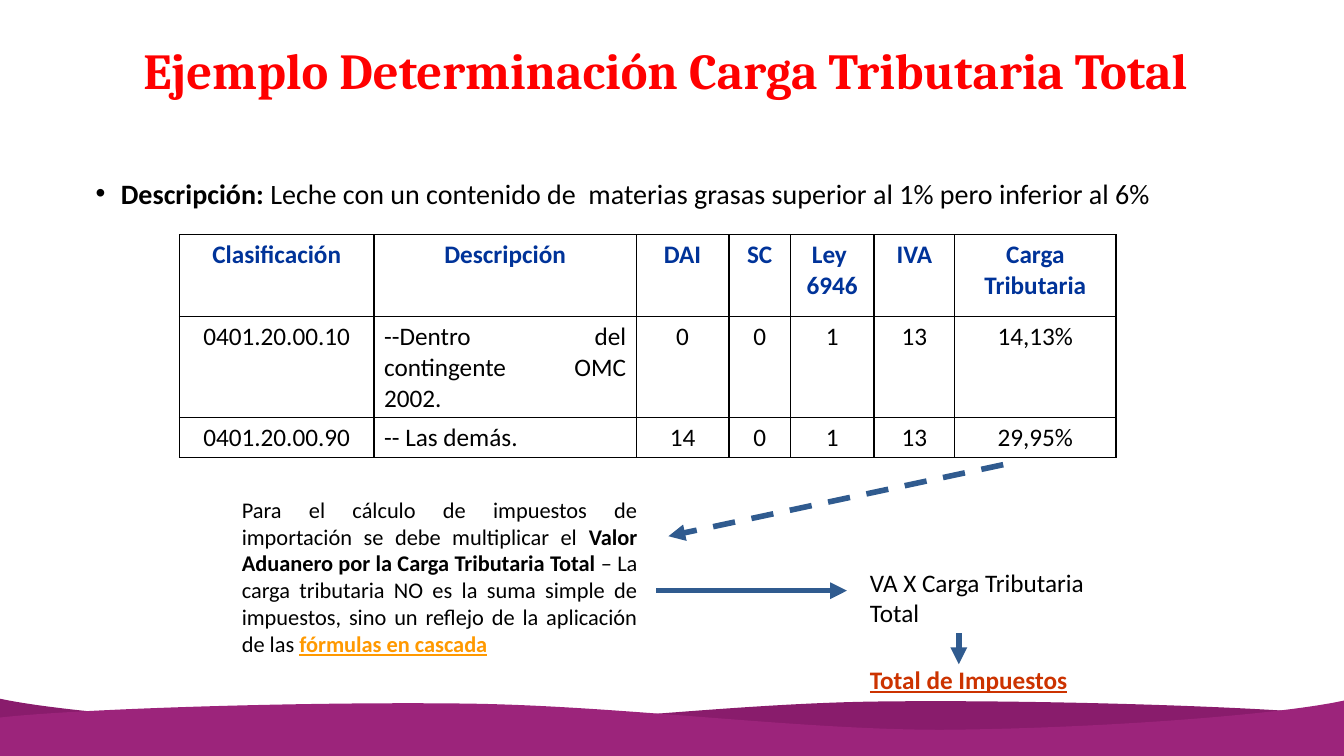
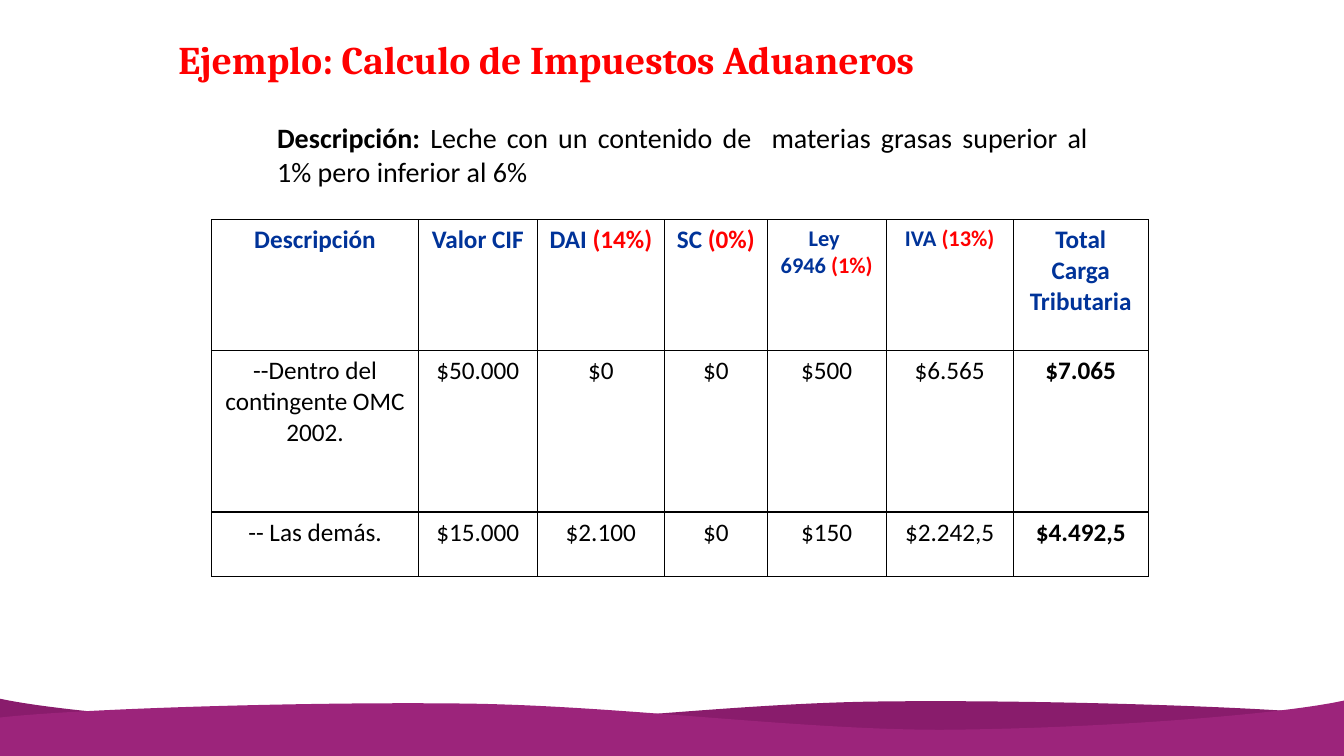
import pptx
import pptx.dml.color
import pptx.enum.dml
import pptx.enum.shapes
import pptx.enum.text
import pptx.oxml
import pptx.oxml.ns
import pptx.util
from lxml import etree

Inches = pptx.util.Inches
Pt = pptx.util.Pt
RGBColor = pptx.dml.color.RGBColor
Align = pptx.enum.text.PP_ALIGN
Anchor = pptx.enum.text.MSO_ANCHOR
qn = pptx.oxml.ns.qn

RED = RGBColor(0xFF, 0x00, 0x00)
BLACK = RGBColor(0x00, 0x00, 0x00)
HEADING_BLUE = RGBColor(0x00, 0x33, 0x99)
ARROW_BLUE = RGBColor(0x30, 0x5B, 0x8F)
ORANGE = RGBColor(0xFF, 0x99, 0x00)
RUST = RGBColor(0xCC, 0x33, 0x00)
DARK_PURPLE = RGBColor(0x89, 0x1C, 0x6C)
PURPLE = RGBColor(0x9C, 0x24, 0x7B)

SLIDE_WIDTH, SLIDE_HEIGHT = 13.33, 7.5
TITLE_FONT, BODY_FONT = "Cambria", "Calibri"
WAVE_POINTS = [
    (13.33, 7.1),
    (12.56, 7.01), (10.26, 6.94), (8.7, 6.96),
    (7.15, 6.98), (5.43, 7.22), (3.98, 7.22),
    (2.53, 7.21), (0.68, 7.08), (-0.01, 6.93),
]
DESCRIPTION = [
    ("Descripción:", {"bold": True}),
    " Leche con un contenido de  materias grasas superior al 1% pero inferior al 6%",
]


def write_text(frame, paragraphs, size=18, font=BODY_FONT, color=BLACK, bold=False,
               underline=False, align=Align.LEFT, line_spacing=None):
    """Fill a text frame; a run is a string or a (string, format overrides) pair."""
    frame.word_wrap = True
    for index, runs in enumerate(paragraphs):
        paragraph = frame.paragraphs[0] if index == 0 else frame.add_paragraph()
        paragraph.alignment = align
        if line_spacing:
            paragraph.line_spacing = line_spacing
        for item in [runs] if isinstance(runs, str) else runs:
            text, overrides = (item, {}) if isinstance(item, str) else item
            look = {"size": size, "color": color, "bold": bold, "underline": underline}
            look.update(overrides)
            run = paragraph.add_run()
            run.text = text
            run.font.name = font
            run.font.size = Pt(look["size"])
            run.font.bold = look["bold"]
            run.font.underline = look["underline"]
            run.font.color.rgb = look["color"]


def add_text(slide, box, paragraphs, anchor=Anchor.TOP, **look):
    """Add a text box and return its text frame."""
    frame = slide.shapes.add_textbox(*map(Inches, box)).text_frame
    frame.vertical_anchor = anchor
    write_text(frame, paragraphs, **look)
    return frame


def add_title(slide, box, text, **look):
    """Add the red slide title."""
    add_text(slide, box, [text], font=TITLE_FONT, color=RED, bold=True,
             line_spacing=0.9, **look)


def add_bullet(paragraph, indent):
    """Give a paragraph a hanging bullet."""
    properties = paragraph._p.get_or_add_pPr()
    properties.set("marL", str(Inches(indent)))
    properties.set("indent", str(-Inches(indent)))
    etree.SubElement(properties, qn("a:buFont")).set("typeface", "Arial")
    etree.SubElement(properties, qn("a:buChar")).set("char", "•")


def add_wave(slide, points, color):
    """Add a wave whose upper edge is curved and which fills down to the slide's bottom."""
    outline = points + [(points[-1][0], SLIDE_HEIGHT), (points[0][0], SLIDE_HEIGHT)]
    outline = [(Inches(x), Inches(y)) for x, y in outline]
    builder = slide.shapes.build_freeform(*outline[0])
    builder.add_line_segments(outline[1:], close=True)
    shape = builder.convert_to_shape()
    shape.shadow.inherit = False
    shape.fill.solid()
    shape.fill.fore_color.rgb = color
    shape.line.fill.background()
    segments = list(shape._element.iter(qn("a:lnTo")))[:len(points) - 1]
    for first in range(0, len(segments), 3):
        curve = etree.Element(qn("a:cubicBezTo"))
        segments[first].addprevious(curve)
        for segment in segments[first:first + 3]:
            curve.append(segment[0])
            segment.getparent().remove(segment)


def add_base_slide(presentation):
    """Add a blank slide with the two mirrored waves of the footer."""
    slide = presentation.slides.add_slide(presentation.slide_layouts[6])
    add_wave(slide, WAVE_POINTS, DARK_PURPLE)
    mirrored = [(SLIDE_WIDTH - 0.01 - x, y + 0.02) for x, y in WAVE_POINTS]
    add_wave(slide, mirrored, PURPLE)
    return slide


def add_arrow(slide, start, end, dashed=False):
    """Add a thick blue arrow."""
    arrow = slide.shapes.add_connector(
        pptx.enum.shapes.MSO_CONNECTOR.STRAIGHT, *map(Inches, start + end))
    arrow.line.color.rgb = ARROW_BLUE
    arrow.line.width = Pt(4)
    if dashed:
        arrow.line.dash_style = pptx.enum.dml.MSO_LINE.DASH
    etree.SubElement(arrow.get_or_add_ln(), qn("a:tailEnd")).set("type", "triangle")
    etree.SubElement(arrow._element.spPr, qn("a:effectLst"))


def add_borders(cell):
    """Draw thin black borders on every side of a cell."""
    properties = cell._tc.get_or_add_tcPr()
    for side in ("lnL", "lnR", "lnT", "lnB"):
        properties.append(pptx.oxml.parse_xml(
            f'<a:{side} {pptx.oxml.ns.nsdecls("a")} w="{Pt(1)}"><a:solidFill>'
            f'<a:srgbClr val="{BLACK}"/></a:solidFill></a:{side}>'))


def add_tax_table(slide, left, top, widths, heights, rows, aligns=None, bold_last=False):
    """Add a bordered table; aligns maps (row, column) to other alignments."""
    aligns = aligns or {}
    table = slide.shapes.add_table(
        len(rows), len(widths), Inches(left), Inches(top),
        Inches(sum(widths)), Inches(sum(heights))).table
    table.first_row = table.horz_banding = False
    for column, width in zip(table.columns, widths):
        column.width = Inches(width)
    for row_index, (height, values) in enumerate(zip(heights, rows)):
        table.rows[row_index].height = Inches(height)
        header = row_index == 0
        for column_index, value in enumerate(values):
            cell = table.cell(row_index, column_index)
            add_borders(cell)
            cell.fill.background()
            last = column_index == len(widths) - 1
            write_text(cell.text_frame, [value] if isinstance(value, str) else value,
                       color=HEADING_BLUE if header else BLACK,
                       bold=header or (bold_last and last),
                       align=aligns.get((row_index, column_index), Align.CENTER))


def add_explanation(slide, left, top):
    """Add the calculation note, its result and the arrows that join them."""
    add_text(slide, (left, top, 4.12, 1.7), [[
        "Para el cálculo de impuestos de importación se debe multiplicar el ",
        ("Valor Aduanero por la Carga Tributaria Total", {"bold": True}),
        " – La carga tributaria NO es la suma simple de impuestos, sino un reflejo"
        " de la aplicación de las ",
        ("fórmulas en cascada", {"color": ORANGE, "bold": True, "underline": True}),
    ]], size=16, align=Align.JUSTIFY)
    add_arrow(slide, (left + 7.65, top - 0.26), (left + 4.33, top + 0.45), dashed=True)
    add_arrow(slide, (left + 4.21, top + 0.99), (left + 6.1, top + 0.99))
    result_left = left + 6.23
    add_text(slide, (result_left, top + 0.71, 2.84, 0.7), ["VA X Carga Tributaria Total"])
    add_text(slide, (result_left, top + 1.67, 2.84, 0.4), ["Total de Impuestos"],
             color=RUST, bold=True, underline=True)
    add_arrow(slide, (left + 7.21, top + 1.41), (left + 7.21, top + 1.72))


def build_tax_burden_slide(presentation):
    """Build the slide that determines the total tax burden."""
    slide = add_base_slide(presentation)
    add_title(slide, (0.85, 0, 11.5, 1.45), "Ejemplo Determinación Carga Tributaria Total",
              size=36, align=Align.CENTER, anchor=Anchor.MIDDLE)
    frame = add_text(slide, (0.85, 1.7, 11.5, 4.76), [DESCRIPTION], size=20,
                     align=Align.JUSTIFY)
    add_bullet(frame.paragraphs[0], 0.25)
    add_tax_table(
        slide, 1.78, 2.33, [1.93, 2.6, 0.92, 0.61, 0.83, 0.8, 1.6], [0.81, 1, 0.4],
        [
            ["Clasificación", "Descripción", "DAI", "SC", ["Ley ", "6946"], "IVA",
             "Carga Tributaria"],
            ["0401.20.00.10", "--Dentro del contingente OMC 2002.", "0", "0", "1", "13",
             "14,13%"],
            ["0401.20.00.90", "-- Las demás.", "14", "0", "1", "13", "29,95%"],
        ],
        aligns={(1, 1): Align.JUSTIFY, (2, 1): Align.LEFT})
    add_explanation(slide, 2.3, 4.87)


def build_duties_slide(presentation):
    """Build the slide that works out the customs duties."""
    slide = add_base_slide(presentation)
    add_title(slide, (1.67, 0, 9.73, 0.87), "Ejemplo: Calculo de Impuestos Aduaneros",
              size=28, anchor=Anchor.BOTTOM)
    add_text(slide, (2.65, 1.15, 8.24, 0.77), [DESCRIPTION], size=20, align=Align.JUSTIFY)
    rate = {"color": RED}
    small = {"size": 16}
    small_rate = {**rate, **small}
    add_tax_table(
        slide, 2.1, 2.18, [2.05, 1.18, 1.26, 1.02, 1.18, 1.26, 1.34], [1.3, 1.6, 0.64],
        [
            ["Descripción", "Valor CIF", [["DAI ", ("(14%)", rate)]],
             [["SC ", ("(0%)", rate)]],
             [[("Ley ", small)], [("6946 ", small), ("(1%)", small_rate)]],
             [[("IVA ", small), ("(13%)", small_rate)]], "Total Carga Tributaria"],
            ["--Dentro del contingente OMC 2002.", "$50.000", "$0", "$0", "$500", "$6.565",
             "$7.065"],
            ["-- Las demás.", "$15.000", "$2.100", "$0", "$150", "$2.242,5", "$4.492,5"],
        ],
        bold_last=True)


def main():
    """Build and save the presentation."""
    presentation = pptx.Presentation()
    presentation.slide_width = Inches(SLIDE_WIDTH)
    presentation.slide_height = Inches(SLIDE_HEIGHT)
    build_tax_burden_slide(presentation)
    build_duties_slide(presentation)
    presentation.save("out.pptx")


if __name__ == "__main__":
    main()
